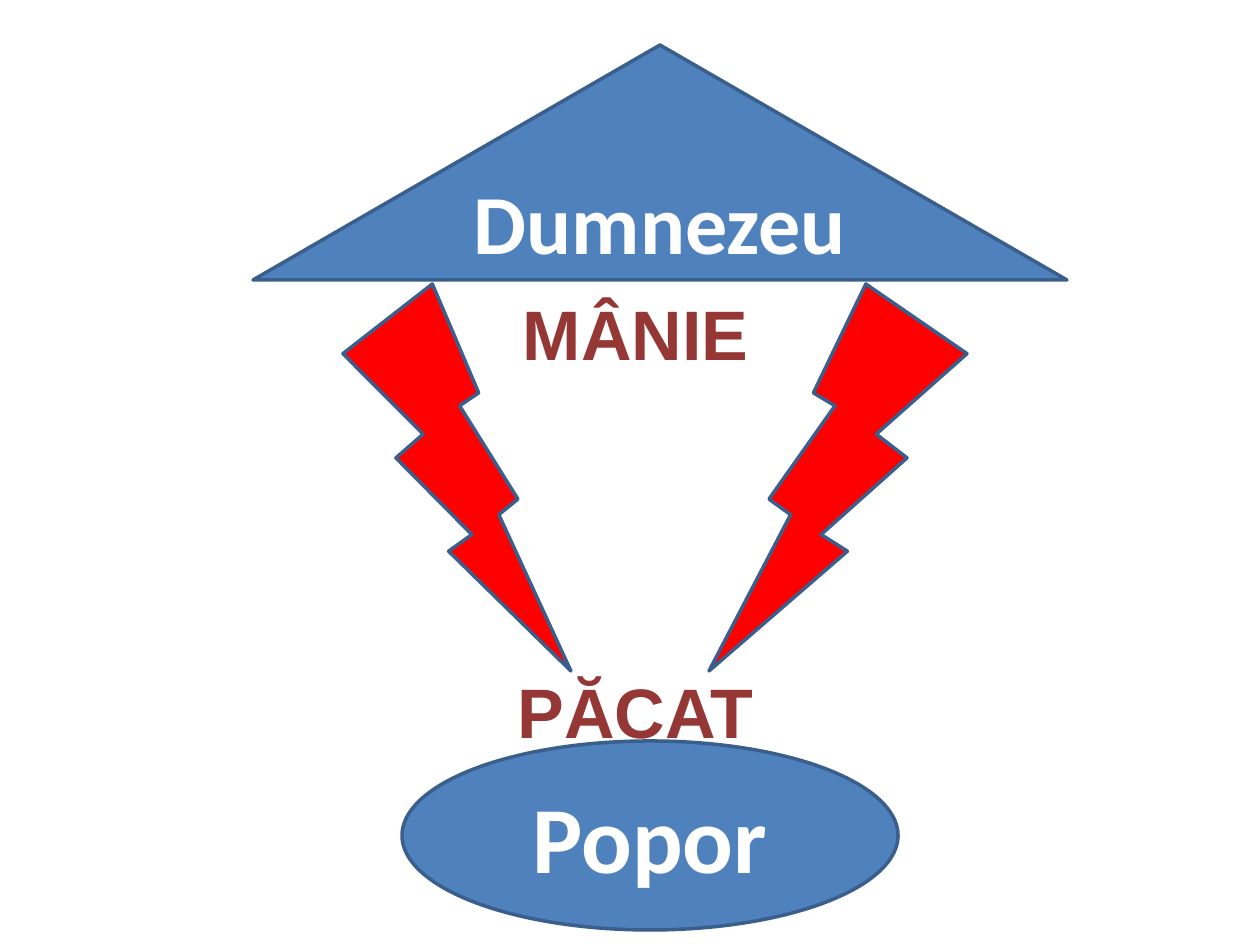
import pptx
import pptx.util
import pptx.dml.color
import pptx.enum.shapes
import pptx.enum.text
from dataclasses import dataclass

SCALE = 914400 / 126  # EMU per px
SHAPES = pptx.enum.shapes.MSO_SHAPE


@dataclass(frozen=True)
class Theme:
    blue: str = "4F81BD"
    outline: str = "3A5F8C"
    red: str = "FF0000"
    maroon: str = "953735"
    white: str = "FFFFFF"
    people_size: int = 54
    god_size: int = 48
    label_size: int = 40
    line_width: int = 2


theme = Theme()


def write(box, text, *, size, font, color):
    frame = box.text_frame
    frame.word_wrap = True
    para = frame.paragraphs[0]
    para.alignment = pptx.enum.text.PP_ALIGN.CENTER
    span = para.add_run()
    span.text = text
    span.font.name = font
    span.font.size = pptx.util.Pt(size)
    span.font.bold = True
    span.font.color.rgb = pptx.dml.color.RGBColor.from_string(color)


def add_figure(page, kind, bounds, fill):
    figure = page.shapes.add_shape(kind, *(round(v * SCALE) for v in bounds))
    figure.shadow.inherit = False
    figure.fill.solid()
    figure.fill.fore_color.rgb = pptx.dml.color.RGBColor.from_string(fill)
    figure.line.color.rgb = pptx.dml.color.RGBColor.from_string(theme.outline)
    figure.line.width = pptx.util.Pt(theme.line_width)
    return figure


deck = pptx.Presentation()
deck.slide_width = round(1260 * SCALE)
deck.slide_height = round(945 * SCALE)
page = deck.slides.add_slide(deck.slide_layouts[6])

# People below, God above
for kind, bounds, text, size in [
    (SHAPES.OVAL, (402, 741, 496, 189), "Popor", theme.people_size),
    (SHAPES.ISOSCELES_TRIANGLE, (253, 45, 814, 235), "Dumnezeu", theme.god_size),
]:
    figure = add_figure(page, kind, bounds, theme.blue)
    figure.text_frame.vertical_anchor = pptx.enum.text.MSO_ANCHOR.MIDDLE
    write(figure, text, size=size, font="Calibri", color=theme.white)

# Lightning bolts, the right one mirrored
for left, width, mirrored in [(343, 228, False), (709, 258, True)]:
    bolt = add_figure(page, SHAPES.LIGHTNING_BOLT, (left, 284, width, 387), theme.red)
    if mirrored:
        bolt.element.spPr.xfrm.set("flipH", "1")

# Labels at both ends of the bolts
for text, top in [("PĂCAT", 662), ("MÂNIE", 284)]:
    box = page.shapes.add_textbox(*(round(v * SCALE) for v in (432, top, 407, 97)))
    box.text_frame.auto_size = pptx.enum.text.MSO_AUTO_SIZE.SHAPE_TO_FIT_TEXT
    write(box, text, size=theme.label_size, font="Arial", color=theme.maroon)

deck.save("out.pptx")
